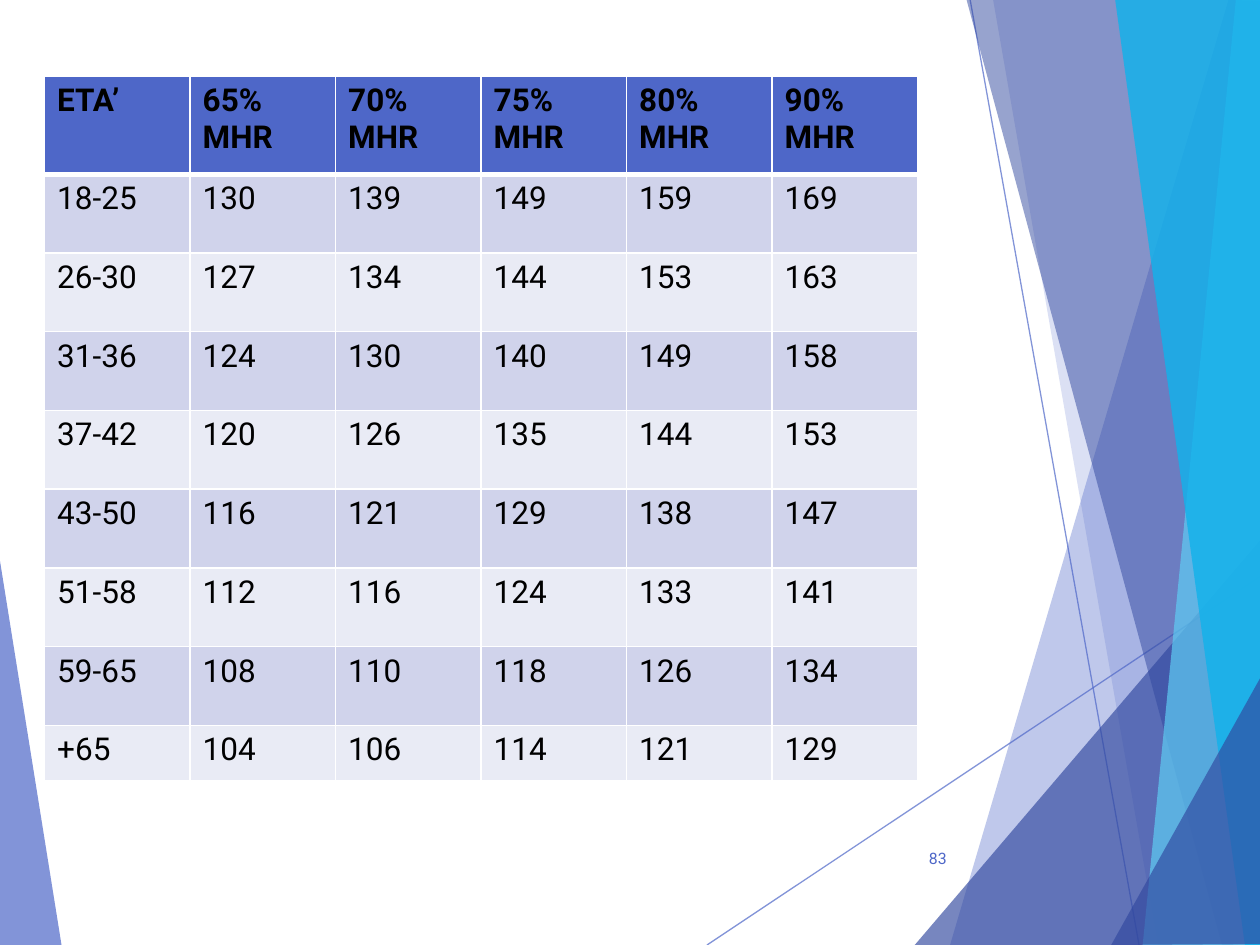
from dataclasses import dataclass

from lxml.etree import SubElement
from pptx import Presentation
from pptx.dml.color import RGBColor
from pptx.enum.shapes import MSO_CONNECTOR
from pptx.enum.text import MSO_ANCHOR, PP_ALIGN
from pptx.oxml.ns import qn
from pptx.util import Pt

FONT = "Roboto"
BLUE, NAVY, SKY, CYAN = "4E67C8", "31489F", "5ECCF3", "12B2EB"
BLACK, WHITE = "000000", "FFFFFF"
BANDS = ("D0D3EB", "E9EBF5")

Point = tuple[float, float]


@dataclass
class Facet:
    color: str
    opacity: int
    points: list[Point]


@dataclass
class Ray:
    start: Point
    end: Point


LEFT_FACET = Facet(BLUE, 70, [(-0.7, 316), (35.3, 540.7), (-0.7, 540)])
RAYS = [Ray((404, 540), (720.7, 329)), Ray((554.4, 0), (650.9, 540))]
RIGHT_FACETS = [
    Facet(BLUE, 36, [(702, 0), (542.9, 540), (721.4, 540.7), (720.7, 0.7)]),
    Facet(BLUE, 20, [(567.4, -0.7), (661.7, 540), (720.7, 540), (720.7, -0.7)]),
    Facet(NAVY, 66, [(522.7, 540), (720, 308.9), (720.7, 540)]),
    Facet(NAVY, 50, [(552.2, -0.7), (698.4, 540), (720.7, 539.3), (720.7, -0.7)]),
    Facet(SKY, 70, [(706.3, -0.7), (653, 540), (720.7, 540), (720, -0.7)]),
    Facet(CYAN, 82, [(637.2, -0.7), (711.4, 540), (721.4, 540), (720, -0.7)]),
    Facet(NAVY, 66, [(635, 540), (721.4, 385.2), (721.4, 539.3)]),
]

HEADER = ["ETA’"] + [f"{pct}% MHR" for pct in (65, 70, 75, 80, 90)]
HEART_RATES = {
    "18-25": (130, 139, 149, 159, 169),
    "26-30": (127, 134, 144, 153, 163),
    "31-36": (124, 130, 140, 149, 158),
    "37-42": (120, 126, 135, 144, 153),
    "43-50": (116, 121, 129, 138, 147),
    "51-58": (112, 116, 124, 133, 141),
    "59-65": (108, 110, 118, 126, 134),
    "+65": (104, 106, 114, 121, 129),
}
COL_WIDTH = 83.15
ROW_HEIGHTS = [56.2] + [45] * 7 + [31.5]


def rgb(value: str) -> RGBColor:
    return RGBColor.from_string(value)


def set_opacity(fill_parent, opacity: int) -> None:
    color = fill_parent.find(".//" + qn("a:srgbClr"))
    SubElement(color, qn("a:alpha"), val=str(opacity * 1000))


def style_text(tf, size: float, color: str, bold: bool = False) -> None:
    for p in tf.paragraphs:
        for r in p.runs:
            r.font.name = FONT
            r.font.size = Pt(size)
            r.font.bold = bold
            r.font.color.rgb = rgb(color)


def draw_facet(shapes, facet: Facet) -> None:
    points = [(Pt(x), Pt(y)) for x, y in facet.points]
    builder = shapes.build_freeform(*points[0])
    builder.add_line_segments(points[1:], close=True)
    sp = builder.convert_to_shape()
    sp.shadow.inherit = False
    sp.line.fill.background()
    sp.fill.solid()
    sp.fill.fore_color.rgb = rgb(facet.color)
    set_opacity(sp._element.spPr, facet.opacity)


def draw_ray(shapes, ray: Ray) -> None:
    ends = [Pt(v) for v in ray.start + ray.end]
    line = shapes.add_connector(MSO_CONNECTOR.STRAIGHT, *ends)
    line.line.width = Pt(0.75)
    line.line.color.rgb = rgb(BLUE)
    set_opacity(line._element.spPr, 70)
    SubElement(line._element.spPr, qn("a:effectLst"))


def set_borders(cell, top: float, bottom: float) -> None:
    tc_pr = cell._tc.get_or_add_tcPr()
    for side, width in (("L", 1), ("R", 1), ("T", top), ("B", bottom)):
        ln = SubElement(tc_pr, qn(f"a:ln{side}"), w=str(Pt(width)))
        fill = SubElement(ln, qn("a:solidFill"))
        SubElement(fill, qn("a:srgbClr"), val=WHITE)


def draw_table(shapes) -> None:
    rows = [HEADER] + [[age, *rates] for age, rates in HEART_RATES.items()]
    frame = shapes.add_table(len(rows), len(HEADER), Pt(25.5), Pt(43.4),
                             Pt(COL_WIDTH * len(HEADER)), Pt(sum(ROW_HEIGHTS)))
    table = frame.table
    table.horz_banding = False
    for col in table.columns:
        col.width = Pt(COL_WIDTH)
    for i, (values, height) in enumerate(zip(rows, ROW_HEIGHTS)):
        table.rows[i].height = Pt(height)
        is_header = i == 0
        for j, value in enumerate(values):
            cell = table.cell(i, j)
            cell.text_frame.text = str(value)
            style_text(cell.text_frame, 18, BLACK, bold=is_header)
            # The rule below the header is thicker than the grid
            set_borders(cell, 3 if i == 1 else 1, 3 if is_header else 1)
            cell.fill.solid()
            cell.fill.fore_color.rgb = rgb(BLUE if is_header else BANDS[(i - 1) % 2])


def draw_page_number(shapes, number: int) -> None:
    box = shapes.add_textbox(Pt(507.6), Pt(476), Pt(40.4), Pt(28.8))
    tf = box.text_frame
    tf.word_wrap = True
    tf.vertical_anchor = MSO_ANCHOR.MIDDLE
    tf.text = str(number)
    tf.paragraphs[0].alignment = PP_ALIGN.RIGHT
    style_text(tf, 9, BLUE)


def main() -> None:
    prs = Presentation()
    prs.slide_width, prs.slide_height = Pt(720), Pt(540)
    s = prs.slides.add_slide(prs.slide_layouts[6])

    # Background facets and rays
    draw_facet(s.shapes, LEFT_FACET)
    for ray in RAYS:
        draw_ray(s.shapes, ray)
    for facet in RIGHT_FACETS:
        draw_facet(s.shapes, facet)

    # Content
    draw_page_number(s.shapes, 83)
    draw_table(s.shapes)
    prs.save("out.pptx")


if __name__ == "__main__":
    main()
